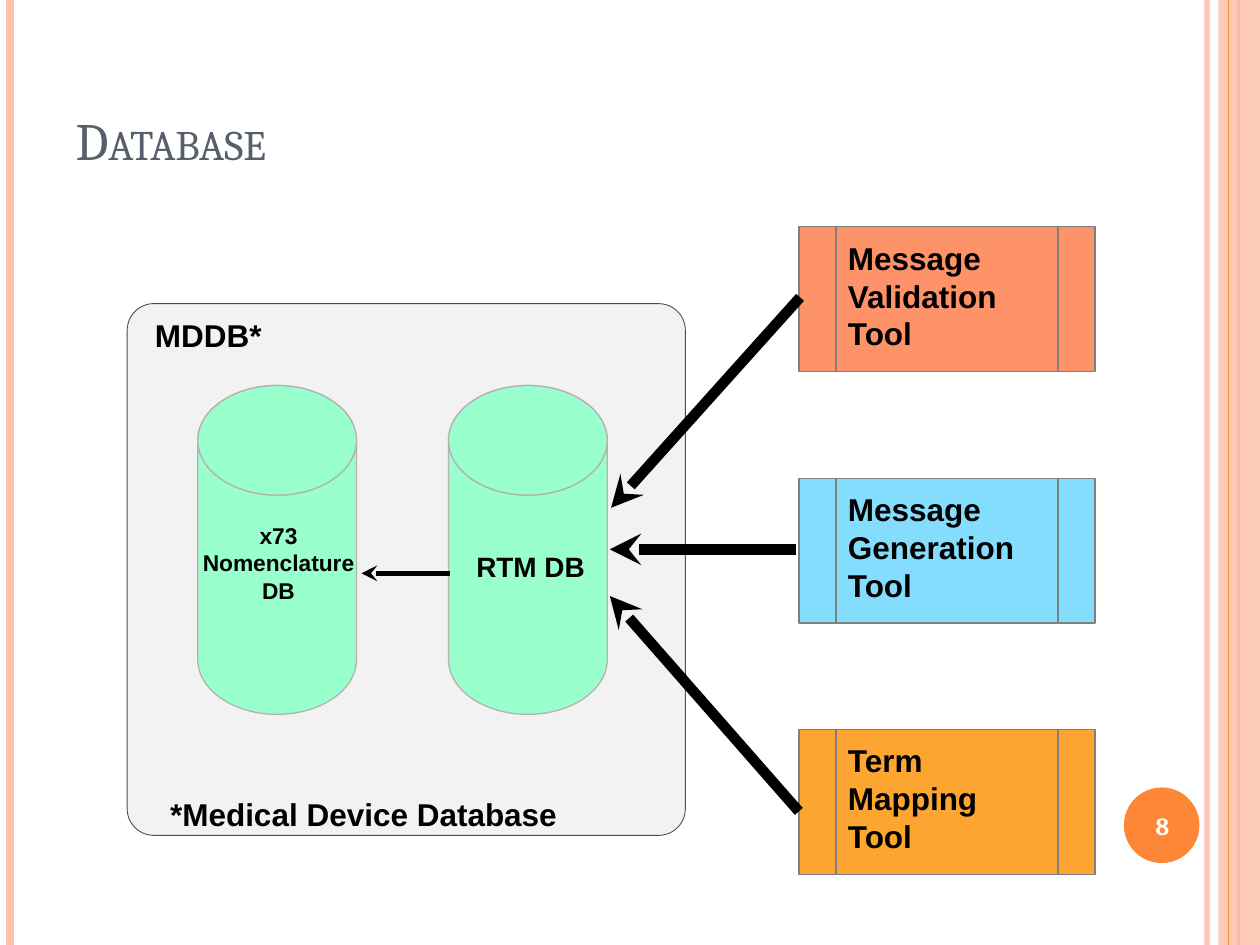
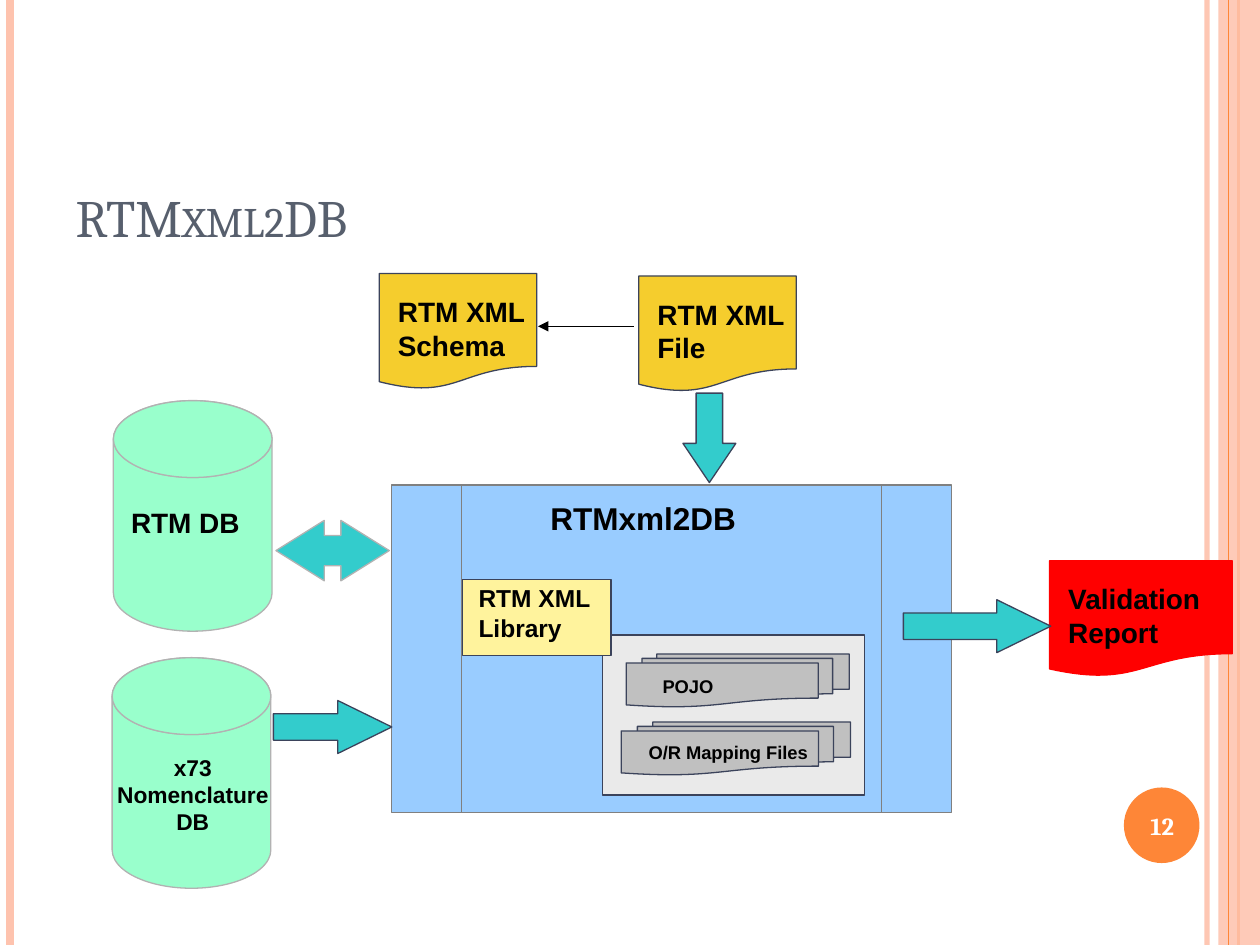
from lxml import etree
from pptx import Presentation
from pptx.dml.color import RGBColor
from pptx.enum.shapes import MSO_CONNECTOR, MSO_SHAPE
from pptx.enum.text import MSO_ANCHOR, MSO_AUTO_SIZE, PP_ALIGN
from pptx.oxml.ns import qn
from pptx.util import Inches, Pt

STRAIGHT = MSO_CONNECTOR.STRAIGHT
RECT, OVAL, CAN = MSO_SHAPE.RECTANGLE, MSO_SHAPE.OVAL, MSO_SHAPE.CAN
ROUNDED = MSO_SHAPE.ROUNDED_RECTANGLE
PROCESS = MSO_SHAPE.FLOWCHART_PREDEFINED_PROCESS
STEP = MSO_SHAPE.FLOWCHART_PROCESS
DOCUMENT = MSO_SHAPE.FLOWCHART_DOCUMENT
DOCUMENTS = MSO_SHAPE.FLOWCHART_MULTIDOCUMENT
RIGHT, DOWN, BOTH = MSO_SHAPE.RIGHT_ARROW, MSO_SHAPE.DOWN_ARROW, MSO_SHAPE.LEFT_RIGHT_ARROW
LEFT, CENTER = PP_ALIGN.LEFT, PP_ALIGN.CENTER
MIDDLE, BOTTOM = MSO_ANCHOR.MIDDLE, MSO_ANCHOR.BOTTOM
NO_FIT = MSO_AUTO_SIZE.NONE

BODY_FONT, TITLE_FONT = "Arial", "Cambria"
BLACK = RGBColor(0x00, 0x00, 0x00)
WHITE = RGBColor(0xFF, 0xFF, 0xFF)
SLATE = RGBColor(0x57, 0x5F, 0x6D)
ORANGE = RGBColor(0xFE, 0x86, 0x37)
PEACH = RGBColor(0xFE, 0xC3, 0xAE)
PANEL = RGBColor(0xF2, 0xF2, 0xF2)
PANEL_EDGE = RGBColor(0x4D, 0x4D, 0x4D)
MINT = RGBColor(0x99, 0xFF, 0xCC)
SILVER = RGBColor(0xB2, 0xB2, 0xB2)
SALMON = RGBColor(0xFE, 0x93, 0x6A)
SKY = RGBColor(0x84, 0xDD, 0xFD)
AMBER = RGBColor(0xFD, 0xA5, 0x31)
TOOL_EDGE = RGBColor(0x7F, 0x7F, 0x7F)
GOLD = RGBColor(0xF5, 0xCD, 0x2D)
NAVY = RGBColor(0x3B, 0x43, 0x5B)
TEAL = RGBColor(0x33, 0xCC, 0xCC)
RED = RGBColor(0xFF, 0x00, 0x00)
BLUE = RGBColor(0x99, 0xCC, 0xFF)
BLUE_EDGE = RGBColor(0x80, 0x80, 0x80)
PALE = RGBColor(0xEA, 0xEA, 0xEA)
GREY = RGBColor(0xC0, 0xC0, 0xC0)
LEMON = RGBColor(0xFF, 0xF3, 0x9D)

prs = Presentation()
prs.slide_width, prs.slide_height = Inches(10), Inches(7.5)
COL, ROW = prs.slide_width / 100, prs.slide_height / 75


def draw(slide, kind, box, fill, edge=None, width=0.75, adjust=()):
    left, top, wide, high = box
    shape = slide.shapes.add_shape(
        kind, int(left * COL), int(top * ROW), int(wide * COL), int(high * ROW))
    shape.shadow.inherit = False
    shape.fill.solid()
    shape.fill.fore_color.rgb = fill
    if edge is None:
        shape.line.fill.background()
    else:
        shape.line.color.rgb = edge
        shape.line.width = Pt(width)
    for index, value in enumerate(adjust):
        shape.adjustments[index] = value
    return shape


def connect(slide, start, end, color, width, head=None):
    link = slide.shapes.add_connector(
        STRAIGHT, int(start[0] * COL), int(start[1] * ROW), int(end[0] * COL), int(end[1] * ROW))
    link.line.color.rgb = color
    link.line.width = Pt(width)
    if head:
        etree.SubElement(link.line._get_or_add_ln(), qn("a:tailEnd"), type=head)
    etree.SubElement(link._element.spPr, qn("a:effectLst"))
    return link


layout = prs.slide_layouts[5]
database = prs.slides.add_slide(layout)
importer = prs.slides.add_slide(layout)

inner_rule = connect(database, (95.8, 0), (95.8, 75), PEACH, 3)
left_rule = connect(database, (0.8, 0), (0.8, 75), PEACH, 4.5)
bright_rule = connect(database, (98.3, 0), (98.3, 75), ORANGE, 1.5)
side_band = draw(database, RECT, (96.7, 0, 3.3, 75), PEACH)
thin_rule = connect(database, (97.5, 0), (97.5, 75), ORANGE, 0.75)
page_disc = draw(database, OVAL, (89.2, 62.5, 6, 6), ORANGE)
for part, opacity in ((inner_rule, 93), (side_band, 87)):
    tint = part._element.spPr.find(".//" + qn("a:srgbClr"))
    etree.SubElement(tint, qn("a:alpha"), val=str(opacity * 1000))
for part in (inner_rule, left_rule, bright_rule, side_band, thin_rule, page_disc):
    layout.shapes.element.append(part._element)
for number, properties in enumerate(layout.element.iter(qn("p:cNvPr")), 1):
    properties.set("id", str(number))

for slide, heading, title_rows in ((database, "Database", 6.4), (importer, "RTMxml2DB", 12.5)):
    title = slide.shapes.title
    title.left, title.top = int(5 * COL), int(7.7 * ROW)
    title.width, title.height = int(89.7 * COL), int(title_rows * ROW)
    title.text_frame.auto_size = NO_FIT
    title.text_frame.vertical_anchor = BOTTOM
    paragraph = title.text_frame.paragraphs[0]
    paragraph.alignment = LEFT
    run = paragraph.add_run()
    run.text = heading
    run.font.name, run.font.size = TITLE_FONT, Pt(30)
    run.font.color.rgb = SLATE
    run.font._element.set("cap", "small")

draw(database, ROUNDED, (10.1, 24.1, 44.3, 42.2), PANEL, PANEL_EDGE, 0.5, (0.05,))

CAN_WIDTH = 12.6
for slide, left, top, high in (
    (database, 35.6, 30.6, 26.1),
    (database, 15.7, 30.6, 26.1),
    (importer, 8.9, 52.2, 18.3),
    (importer, 9, 31.8, 18.3),
):
    lid = high / 3
    draw(slide, CAN, (left, top, CAN_WIDTH, high), MINT, SILVER, adjust=(lid / CAN_WIDTH,))
    draw(slide, OVAL, (left, top, CAN_WIDTH, lid), MINT, SILVER)

labels = [
    (database, (37.8, 43.6, 13.1, 3.3), "RTM DB", 16, LEFT, 0),
    (database, (14.9, 41.4, 14.4, 7.7), "x73 Nomenclature DB", 13, CENTER, 0),
    (database, (12.3, 25.1, 13.2, 3.7), "MDDB*", 18, LEFT, 0),
    (database, (13.5, 63.1, 42.6, 3.6), "*Medical Device Database", 18, LEFT, 0),
    (importer, (10.4, 40.1, 13.1, 3.2), "RTM DB", 16, LEFT, 0),
    (importer, (8.1, 59.8, 14.4, 5.4), "x73 Nomenclature DB", 13, CENTER, 0),
    (importer, (42.7, 39.1, 27, 4.7), "RTMxml2DB", 18, LEFT, 1),
    (importer, (51.6, 53.1, 15.1, 3.3), "POJO", 10.5, LEFT, 1),
    (importer, (50.5, 58.3, 14.8, 2.6), "O/R Mapping Files", 10.5, LEFT, 1),
    (importer, (37, 45.8, 12.4, 6.7), "RTM XML Library", 14, LEFT, 1),
]

for index, (tool, fill) in enumerate((
    ("Message Validation Tool", SALMON),
    ("Message Generation Tool", SKY),
    ("Term Mapping Tool", AMBER),
)):
    top = 18 + index * 19.95
    draw(database, PROCESS, (63.4, top, 23.5, 11.5), fill, TOOL_EDGE)
    labels.append((database, (67.3, top + 0.95, 15.7, 9.7), tool, 18, LEFT, 0))

for start, end, width in (
    ((63.5, 23.6), (48.5, 40.3), 6),
    ((63.2, 43.6), (48.4, 43.6), 6),
    ((63.4, 64.4), (48.4, 47.3), 6),
    ((35.7, 45.5), (28.7, 45.5), 3),
):
    connect(database, start, end, BLACK, width, "stealth")

for document, left, top, wide, fill, edge in (
    ("RTM XML File", 50.7, 21.9, 12.5, GOLD, NAVY),
    ("RTM XML Schema", 30.1, 21.7, 12.5, GOLD, NAVY),
    ("Validation Report", 83.3, 44.5, 14.5, RED, RED),
):
    draw(importer, DOCUMENT, (left, top, wide, 9.2), fill, edge)
    labels.append((importer, (left + 0.5, top + 1.2, wide - 0.2, 6.4), document, 16, LEFT, 1))
connect(importer, (50.3, 25.9), (42.7, 25.9), BLACK, 0.75, "triangle")

for kind, box, fill, edge in (
    (PROCESS, (31.1, 38.5, 44.4, 26), BLUE, BLUE_EDGE),
    (RECT, (47.8, 50.4, 20.8, 12.7), PALE, NAVY),
    (DOCUMENTS, (49.7, 51.9, 17.7, 4.2), GREY, NAVY),
    (DOCUMENTS, (49.3, 57.3, 18.2, 4.2), GREY, NAVY),
    (STEP, (36.7, 46, 11.8, 6), LEMON, NAVY),
):
    draw(importer, kind, box, fill, edge)

for kind, box, edge, head in (
    (DOWN, (54.2, 31.2, 4.2, 7.1), NAVY, 0.74),
    (RIGHT, (71.7, 47.6, 11.7, 4.2), NAVY, 1.02),
    (RIGHT, (21.7, 55.6, 9.4, 4.2), NAVY, 1.02),
    (BOTH, (21.9, 41.3, 9, 4.8), SILVER, 0.8),
):
    draw(importer, kind, box, TEAL, edge, adjust=(0.5, head))

PAGE_BOX = (88.9, 62.7, 6.7, 5.7)
labels += [(database, PAGE_BOX, "8", 14, CENTER, 1), (importer, PAGE_BOX, "12", 14, CENTER, 1)]

for slide, box, words, size, align, inset in labels:
    left, top, wide, high = box
    label = slide.shapes.add_textbox(
        int(left * COL), int(top * ROW), int(wide * COL), int(high * ROW))
    frame = label.text_frame
    frame.word_wrap = True
    frame.margin_left = frame.margin_right = int(inset * COL)
    frame.margin_top = frame.margin_bottom = int(inset * ROW / 2)
    paragraph = frame.paragraphs[0]
    paragraph.alignment = align
    run = paragraph.add_run()
    run.text = words
    run.font.size, run.font.bold = Pt(size), True
    if box == PAGE_BOX:
        frame.vertical_anchor = MIDDLE
        run.font.name, run.font.color.rgb = TITLE_FONT, WHITE
    else:
        run.font.name, run.font.color.rgb = BODY_FONT, BLACK

prs.save("out.pptx")
